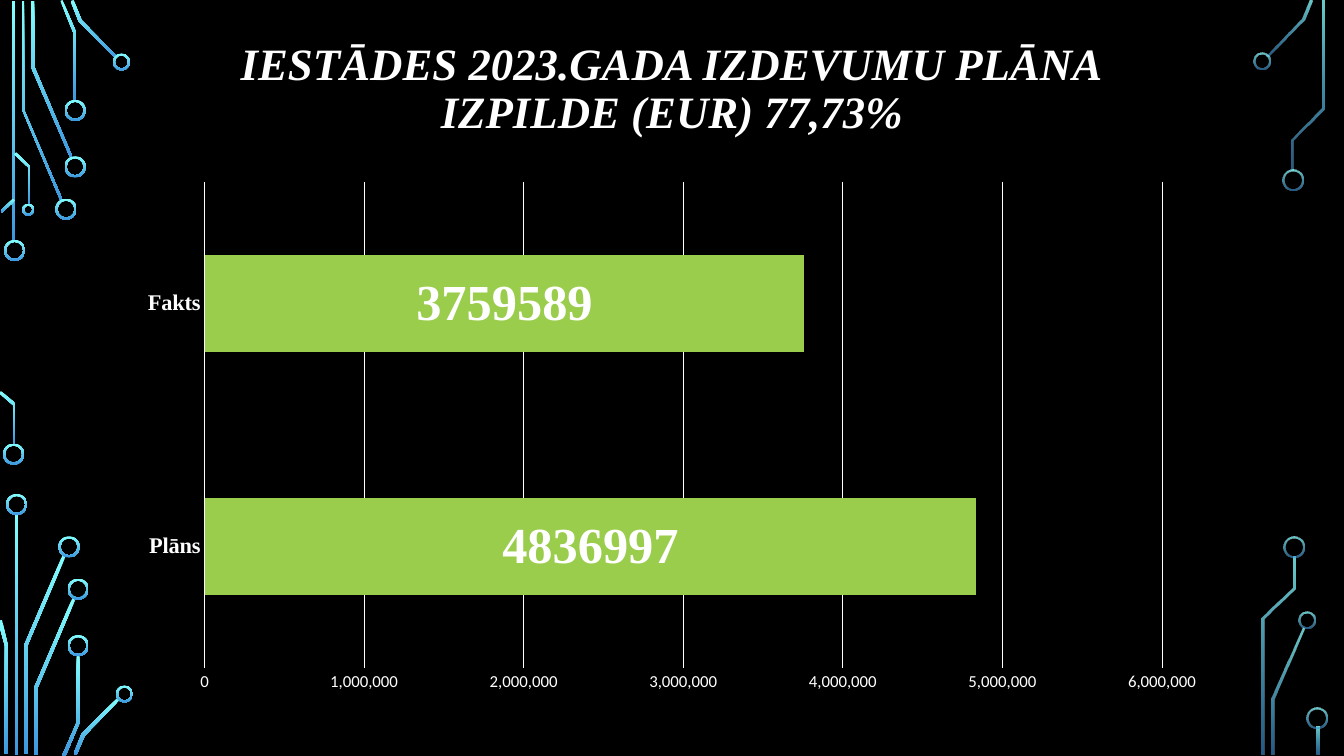
from lxml import etree
from pptx import Presentation
from pptx.chart.data import CategoryChartData
from pptx.dml.color import RGBColor
from pptx.enum.chart import XL_CHART_TYPE, XL_LABEL_POSITION, XL_TICK_MARK
from pptx.enum.shapes import MSO_SHAPE
from pptx.enum.text import MSO_ANCHOR, MSO_AUTO_SIZE, PP_ALIGN
from pptx.oxml.ns import qn
from pptx.util import Inches, Pt

BAR = XL_CHART_TYPE.BAR_STACKED
MIDDLE = XL_LABEL_POSITION.CENTER
NO_TICK = XL_TICK_MARK.NONE
DONUT = MSO_SHAPE.DONUT
RECT = MSO_SHAPE.RECTANGLE

BLACK = RGBColor(0x00, 0x00, 0x00)
WHITE = RGBColor(0xFF, 0xFF, 0xFF)
CYAN = RGBColor(0x82, 0xFF, 0xFF)
BLUE = RGBColor(0x3D, 0x97, 0xDE)
GREEN = RGBColor(0x9A, 0xCD, 0x4C)
SERIF = "Times New Roman"
SANS = "Calibri"
RIM = 0.02
RIGHT = 12

deck = Presentation()
deck.slide_width = Inches(13.33)
deck.slide_height = Inches(7.5)
slide = deck.slides.add_slide(deck.slide_layouts[5])
shapes = slide.shapes
slide.background.fill.solid()
slide.background.fill.fore_color.rgb = BLACK


def paint(shape, left):
    shape.shadow.inherit = False
    shape.line.fill.background()
    shape.fill.gradient()
    shape.fill.gradient_angle = 270
    for stop, color in zip(shape.fill.gradient_stops, (CYAN, BLUE)):
        stop.color.rgb = color
    if left > RIGHT:
        tints = shape._element.spPr.iter(qn("a:srgbClr"))
        for tint, alpha in zip(tints, ("80000", "60000")):
            etree.SubElement(tint, qn("a:alpha")).set("val", alpha)


def set_font(font, name, size, bold=False):
    font.name = name
    font.size = Pt(size)
    font.bold = bold
    font.color.rgb = WHITE


bars = [(0.12, 0.01, 2.39), (0.15, 5.1, 2.39), (13.06, 7.21, 0.28)]
for left, top, height in bars:
    bar = shapes.add_shape(RECT, Inches(left), Inches(top), Inches(0.03), Inches(height))
    paint(bar, left)

traces = [
    [(0.6, 1.99), (0.22, 1.09), (0.22, 0.01), (0.24, 0.01), (0.24, 1.09), (0.62, 1.98)],
    [(0.7, 1.57), (0.31, 0.67), (0.31, 0.01), (0.34, 0.01), (0.34, 0.66), (0.72, 1.56)],
    [(0.76, 1), (0.73, 1), (0.73, 0.33), (0.6, 0.01), (0.62, 0), (0.76, 0.33)],
    [(1.15, 0.58), (0.78, 0.21), (0.7, 0.01), (0.73, 0), (0.81, 0.2), (1.16, 0.56)],
    [(0.02, 2.11), (0.01, 2.09), (0.13, 1.97), (0.15, 1.99)],
    [(0.15, 4.41), (0.13, 4.41), (0.13, 4.02), (-0.01, 3.9), (0.01, 3.88), (0.15, 4)],
    [(0.3, 2.03), (0.28, 2.03), (0.28, 1.66), (0.14, 1.53), (0.16, 1.51), (0.3, 1.65)],
    [(0.27, 7.48), (0.24, 7.48), (0.24, 6.4), (0.62, 5.51), (0.65, 5.52), (0.27, 6.41)],
    [(0.08, 7.48), (0.05, 7.48), (0.05, 6.41), (-0.02, 6.16), (0.02, 6.15), (0.08, 6.41)],
    [(0.37, 7.49), (0.34, 7.49), (0.34, 6.82), (0.72, 5.93), (0.75, 5.94), (0.37, 6.83)],
    [(0.65, 7.5), (0.62, 7.49), (0.76, 7.17), (0.76, 6.5), (0.79, 6.5), (0.79, 7.17)],
    [(0.76, 7.49), (0.73, 7.48), (0.81, 7.28), (1.17, 6.92), (1.19, 6.94), (0.84, 7.3)],
    [(12.58, 0.56), (12.56, 0.55), (12.91, 0.19), (12.99, 0), (13.02, 0.01), (12.94, 0.2)],
    [(12.64, 7.49), (12.61, 7.49), (12.61, 6.93), (12.92, 6.23), (12.94, 6.24), (12.64, 6.94)],
    [(12.83, 1.69), (12.81, 1.69), (12.81, 1.38), (13.11, 1.07), (13.11, 0.01),
     (13.14, 0.01), (13.14, 1.08), (12.83, 1.39)],
    [(12.54, 7.49), (12.51, 7.49), (12.51, 6.13), (12.82, 5.83), (12.82, 5.52),
     (12.85, 5.52), (12.85, 5.84), (12.54, 6.14)],
]
for trace in traces:
    points = [(Inches(x), Inches(y)) for x, y in trace]
    path = shapes.build_freeform(*points[0])
    path.add_line_segments(points[1:], close=True)
    paint(path.convert_to_shape(), trace[0][0])

rings = {
    0.21: [(0.04, 2.38), (0.03, 4.4), (0.55, 1.97), (0.64, 1.55), (0.64, 0.99),
           (0.06, 4.9), (0.58, 5.32), (0.67, 5.74), (0.67, 6.3),
           (12.72, 1.68), (12.73, 5.32), (12.96, 7.02)],
    0.17: [(1.12, 0.53), (1.15, 6.8), (12.43, 0.52), (12.88, 6.07)],
    0.12: [(0.22, 2.02)],
}
for size, spots in rings.items():
    for left, top in spots:
        ring = shapes.add_shape(DONUT, Inches(left), Inches(top), Inches(size), Inches(size))
        ring.adjustments[0] = RIM / size
        paint(ring, left)

title = shapes.title
title.left, title.top = Inches(1.25), Inches(0.08)
title.width, title.height = Inches(10.83), Inches(1.62)
frame = title.text_frame
frame.word_wrap = True
frame.auto_size = MSO_AUTO_SIZE.NONE
frame.vertical_anchor = MSO_ANCHOR.MIDDLE
head = frame.paragraphs[0]
head.add_run().text = "IESTĀDES 2023.GADA IZDEVUMU PLĀNA"
head.add_line_break()
head.add_run().text = "IZPILDE (EUR) 77,73%"
head.alignment = PP_ALIGN.CENTER
head.line_spacing = 0.9
set_font(head.font, SERIF, 32, True)
head.font.italic = True

data = CategoryChartData()
data.categories = ["Plāns", "Fakts"]
data.add_series("Series 1", (4836997, 3759589))
chart = shapes.add_chart(
    BAR, Inches(1.25), Inches(1.7), Inches(10.83), Inches(5.27), data
).chart
chart.has_legend = False
chart.has_title = False
set_font(chart.font, SANS, 10)

plot = chart.plots[0]
plot.gap_width = 150
plot.overlap = 100
plot.vary_by_categories = False
series = plot.series[0]
series.format.fill.solid()
series.format.fill.fore_color.rgb = GREEN
labels = series.data_labels
labels.show_value = True
labels.position = MIDDLE
set_font(labels.font, SERIF, 36, True)

for axis in (chart.category_axis, chart.value_axis):
    axis.major_tick_mark = NO_TICK
    axis.minor_tick_mark = NO_TICK
    axis.format.line.fill.background()
set_font(chart.category_axis.tick_labels.font, SERIF, 16, True)

scale = chart.value_axis
scale.minimum_scale = 0
scale.maximum_scale = 6000000
scale.major_unit = 1000000
scale.tick_labels.number_format = "#,##0"
scale.tick_labels.number_format_is_linked = False
set_font(scale.tick_labels.font, SANS, 12)
scale.has_major_gridlines = True
grid = scale.major_gridlines.format.line
grid.color.rgb = WHITE
grid.width = Pt(0.75)

deck.save("out.pptx")
